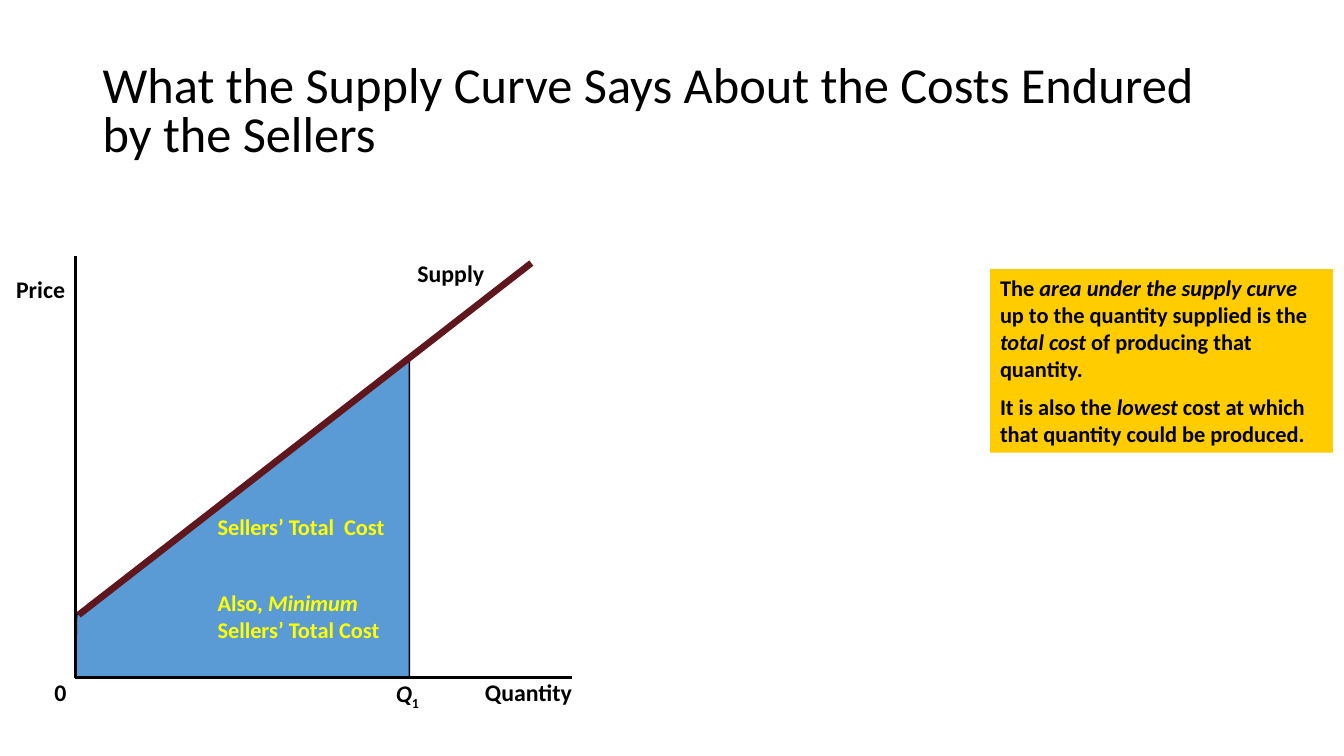
"""Build a slide on the supply curve and the costs of the sellers."""
from dataclasses import dataclass

from lxml.etree import SubElement
from pptx import Presentation
from pptx.dml.color import RGBColor as RGB
from pptx.enum.shapes import MSO_CONNECTOR as LINK, MSO_SHAPE as SHAPE
from pptx.enum.text import MSO_ANCHOR as ANCHOR, PP_ALIGN as ALIGN
from pptx.oxml.ns import qn
from pptx.util import Inches, Pt


@dataclass(frozen=True)
class Theme:
    """Hold the font, colours and type sizes of the slide."""
    face: str = "Calibri"
    ink: str = "000000"
    note: str = "FFCC00"
    area: str = "5B9BD5"
    curve: str = "5F161D"
    glow: str = "FFFF00"
    title: int = 36
    label: int = 17
    body: int = 16


THEME = Theme()
LEFT, BASE, TOP = 0.75, 6.72, 2.54
RIGHT, SOLD = 5.67, 4.06


def paint(item, hue):
    """Give a fill or a line one solid colour."""
    item.solid()
    item.fore_color.rgb = RGB.from_string(hue)


def write(para, text, size, hue, bold=True):
    """Add runs to a paragraph: *italic* parts and _subscript parts."""
    for turn, part in enumerate(text.split("*")):
        for low, word in enumerate(part.split("_")):
            if not word:
                continue
            run = para.add_run()
            run.text = word
            look = {"name": THEME.face, "size": Pt(size), "bold": bold, "italic": turn % 2 == 1}
            for key, value in look.items():
                setattr(run.font, key, value)
            run.font.color.rgb = RGB.from_string(hue)
            if low:
                run.font._element.set("baseline", "-25000")


def fill_frame(shape, texts, size, hue, bold=True, pad=True, wrap=True,
               anchor=ANCHOR.TOP, gap=0, **form):
    """Set the text frame of a shape and write one paragraph per text."""
    frame = shape.text_frame
    look = {"word_wrap": wrap, "vertical_anchor": anchor}
    if not pad:
        look.update(dict.fromkeys(
            ("margin_left", "margin_right", "margin_top", "margin_bottom"), 0))
    for key, value in look.items():
        setattr(frame, key, value)
    for place, text in enumerate(texts):
        para = frame.add_paragraph() if place else frame.paragraphs[0]
        for key, value in {"alignment": ALIGN.LEFT, **form}.items():
            setattr(para, key, value)
        if place:
            para.space_before = Pt(gap)
        write(para, text, size, hue, bold)


def add_text(slide, box, texts, size, hue=THEME.ink, **form):
    """Add a text box."""
    shape = slide.shapes.add_textbox(*map(Inches, box))
    fill_frame(shape, texts, size, hue, **form)


def add_note(slide, box, text):
    """Add a filled note."""
    shape = slide.shapes.add_shape(SHAPE.RECTANGLE, *map(Inches, box))
    shape.shadow.inherit = False
    paint(shape.fill, THEME.note)
    shape.line.fill.background()
    fill_frame(shape, [text], THEME.body, THEME.ink)


def add_path(slide, points, width, hue=None):
    """Add an outline through points, closed and filled if a colour is given."""
    start, *rest = [(Inches(x), Inches(y)) for x, y in points]
    pen = slide.shapes.build_freeform(*start)
    pen.add_line_segments(rest, close=bool(hue))
    shape = pen.convert_to_shape()
    shape.shadow.inherit = False
    if hue:
        paint(shape.fill, hue)
    else:
        shape.fill.background()
    paint(shape.line.fill, THEME.ink)
    shape.line.width = Pt(width)


def add_curve(slide, start, end):
    """Add the straight supply curve."""
    line = slide.shapes.add_connector(LINK.STRAIGHT, *map(Inches, start + end))
    paint(line.line.fill, THEME.curve)
    line.line.width = Pt(4.75)
    SubElement(line._element.spPr, qn("a:effectLst"))


def main():
    """Build and save the slide."""
    deck = Presentation()
    deck.slide_width, deck.slide_height = Inches(13.33), Inches(7.5)
    slide = deck.slides.add_slide(deck.slide_layouts[6])

    add_text(slide, (0.92, 0.4, 11.5, 1.45),
             ["What the Supply Curve Says About the Costs Endured by the Sellers"],
             THEME.title, bold=False, anchor=ANCHOR.MIDDLE, line_spacing=0.8)
    add_note(slide, (9.82, 2.67, 3.4, 1.18),
             "The *area under the supply curve *up to the quantity supplied is the "
             "*total cost *of producing that quantity.")
    add_note(slide, (9.82, 3.85, 3.4, 0.64),
             "It is also the *lowest* cost at which that quantity could be produced.")

    add_path(slide, [(LEFT, BASE), (SOLD, BASE), (SOLD, 3.57), (0.76, 6.1)], 1, THEME.area)
    add_path(slide, [(LEFT, TOP), (LEFT, BASE), (RIGHT, BASE)], 1.63)
    add_curve(slide, (0.78, 6.1), (5.27, 2.61))

    labels = [
        ("Quantity", (4.81, BASE, 0.87, 0.29), ALIGN.LEFT),
        ("Price", (0.16, 2.73, 0.57, 0.29), ALIGN.LEFT),
        ("0", (0.4, BASE, 0.4, 0.29), ALIGN.CENTER),
        ("Supply", (4.14, 2.57, 0.67, 0.27), ALIGN.LEFT),
        ("*Q*_1", (3.92, 6.73, 0.24, 0.29), ALIGN.CENTER),
    ]
    for text, box, side in labels:
        add_text(slide, box, [text], THEME.label, pad=False, wrap=False, alignment=side)
    add_text(slide, (2.06, 5.04, 2.17, 1.45),
             ["Sellers’ Total  Cost", "Also, *Minimum* Sellers’ Total Cost"],
             THEME.body, THEME.glow, gap=35)
    deck.save("out.pptx")


if __name__ == "__main__":
    main()
